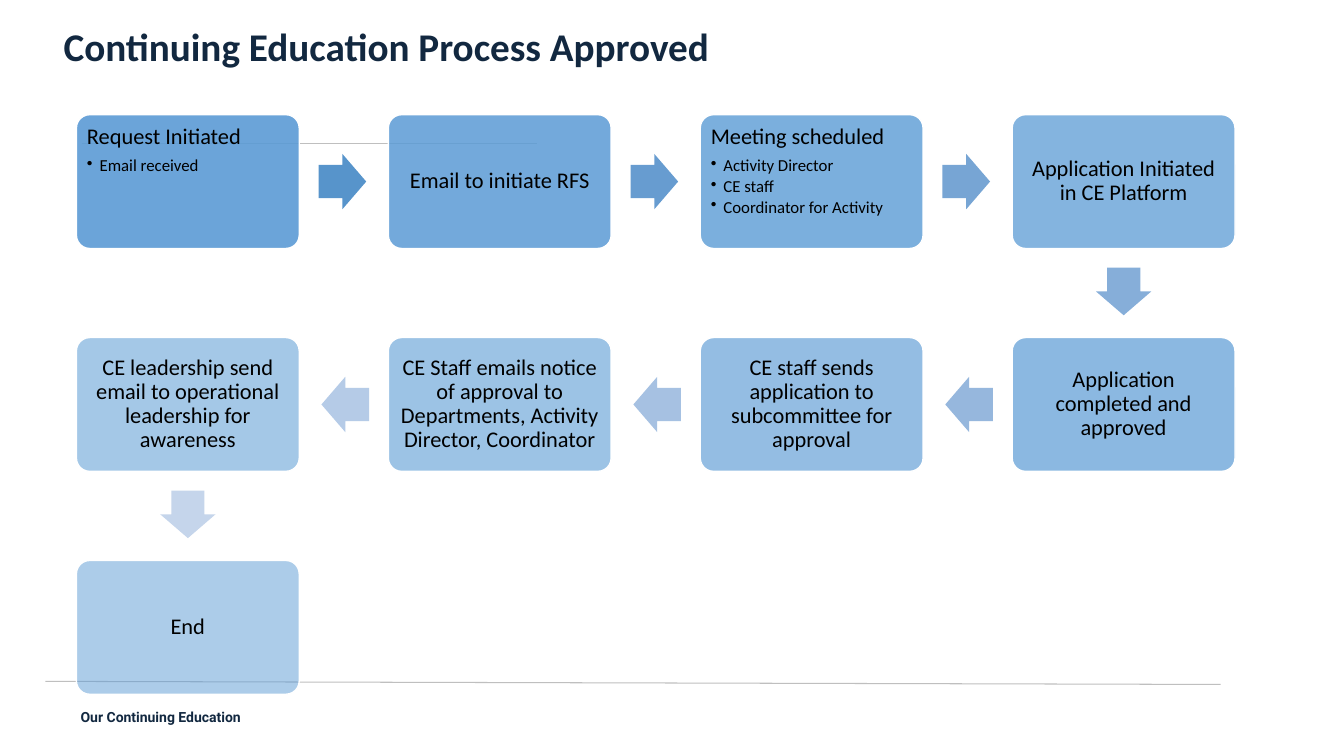
from lxml import etree
from pptx import Presentation
from pptx.dml.color import RGBColor
from pptx.enum.shapes import MSO_CONNECTOR, MSO_SHAPE
from pptx.enum.text import MSO_ANCHOR, MSO_AUTO_SIZE, PP_ALIGN
from pptx.oxml.ns import qn
from pptx.util import Pt

STRAIGHT = MSO_CONNECTOR.STRAIGHT
ROUNDED = MSO_SHAPE.ROUNDED_RECTANGLE
ARROW = MSO_SHAPE.RIGHT_ARROW
TOP, MIDDLE = MSO_ANCHOR.TOP, MSO_ANCHOR.MIDDLE
LEFT, CENTER = PP_ALIGN.LEFT, PP_ALIGN.CENTER
NO_AUTOFIT = MSO_AUTO_SIZE.NONE

NAVY = RGBColor(0x12, 0x28, 0x40)
BLUE = RGBColor(0x5B, 0x9B, 0xD5)
GRAY = RGBColor(0xBF, 0xBF, 0xBF)
BLACK = RGBColor(0x00, 0x00, 0x00)
WHITE = RGBColor(0xFF, 0xFF, 0xFF)
ARROW_COLORS = [
    RGBColor(0x57, 0x94, 0xCB), RGBColor(0x67, 0x9C, 0xD0),
    RGBColor(0x77, 0xA5, 0xD4), RGBColor(0x86, 0xAE, 0xD9),
    RGBColor(0x96, 0xB7, 0xDD), RGBColor(0xA6, 0xC1, 0xE2),
    RGBColor(0xB5, 0xCB, 0xE7), RGBColor(0xC5, 0xD5, 0xEB),
]

STEPS = [
    ("Request Initiated", ["Email received"]),
    ("Email to initiate RFS", []),
    ("Meeting scheduled", ["Activity Director", "CE staff", "Coordinator for Activity"]),
    ("Application Initiated in CE Platform", []),
    ("Application completed and approved", []),
    ("CE staff sends application to subcommittee for approval", []),
    ("CE Staff emails notice of approval to Departments, Activity Director, Coordinator", []),
    ("CE leadership send email to operational leadership for awareness", []),
    ("End", []),
]

COLUMNS = 4
GRID_LEFT, GRID_TOP = 54.6, 81.9
COLUMN_PITCH, ROW_PITCH = 222.8, 159.2
BOX_WIDTH, BOX_HEIGHT = 159.2, 95.6
ARROW_WIDTH, ARROW_HEIGHT = 34, 39.5
ARROW_REACH_ACROSS, ARROW_REACH_DOWN = 110.4, 78.5


def write(para, text, size, font="Calibri", color=BLACK, bold=False,
          align=LEFT, bullet=False, after=0):
    properties = para._p.get_or_add_pPr()
    properties.set("marL", str(Pt(9 if bullet else 0)))
    properties.set("indent", str(Pt(-9 if bullet else 0)))
    para.alignment = align
    para.line_spacing = 0.9
    para.space_before = Pt(0)
    para.space_after = Pt(after)
    if bullet:
        etree.SubElement(properties, qn("a:buChar")).set("char", "•")
    else:
        etree.SubElement(properties, qn("a:buNone"))
    para.font.size = Pt(size)
    para.font.name = font
    span = para.add_run()
    span.text = text
    span.font.name = font
    span.font.size = Pt(size)
    span.font.bold = bold
    span.font.color.rgb = color


deck = Presentation()
deck.slide_width = Pt(960)
deck.slide_height = Pt(540)
page = deck.slides.add_slide(deck.slide_layouts[1])

title, footer = page.placeholders
for holder, text, size, font, place in [
    (title, "Continuing Education Process Approved", 28, "Calibri", (38.2, 15.8, 684.7, 39.6)),
    (footer, "Our Continuing Education", 10, "Roboto", (50.4, 504, 357.8, 20.9)),
]:
    holder.left, holder.top, holder.width, holder.height = map(Pt, place)
    frame = holder.text_frame
    frame.auto_size = NO_AUTOFIT
    frame.word_wrap = True
    frame.vertical_anchor = TOP
    write(frame.paragraphs[0], text, size, font=font, color=NAVY, bold=True)

for ends, weight in [((32.4, 486.7, 871.9, 488.9), 0.75), ((58.3, 102.5, 383.8, 102.5), 0.5)]:
    rule = page.shapes.add_connector(STRAIGHT, *map(Pt, ends))
    rule.line.color.rgb = GRAY
    rule.line.width = Pt(weight)
    etree.SubElement(rule._element.spPr, qn("a:effectLst"))

for number, (heading, details) in enumerate(STEPS):
    row, column = divmod(number, COLUMNS)
    leftward = row % 2 == 1
    last_in_row = column == COLUMNS - 1
    if leftward:
        column = COLUMNS - 1 - column
    left = GRID_LEFT + column * COLUMN_PITCH
    top = GRID_TOP + row * ROW_PITCH

    box = page.shapes.add_shape(ROUNDED, Pt(left), Pt(top), Pt(BOX_WIDTH), Pt(BOX_HEIGHT))
    box.adjustments[0] = 0.1
    box.shadow.inherit = False
    box.fill.solid()
    box.fill.fore_color.rgb = BLUE
    color_node = box._element.spPr.find(qn("a:solidFill"))[0]
    etree.SubElement(color_node, qn("a:alpha")).set("val", str((90 - 5 * number) * 1000))
    box.line.color.rgb = WHITE
    box.line.width = Pt(1)

    frame = box.text_frame
    frame.word_wrap = True
    frame.vertical_anchor = TOP if details else MIDDLE
    frame.margin_left = frame.margin_right = Pt(4.8)
    frame.margin_top = frame.margin_bottom = Pt(4.8)
    write(frame.paragraphs[0], heading, 16,
          align=LEFT if details else CENTER, after=5.6 if details else 0)
    for detail in details:
        write(frame.add_paragraph(), detail, 12, bullet=True, after=1.8)

    if number < len(ARROW_COLORS):
        center_x = left + BOX_WIDTH / 2
        center_y = top + BOX_HEIGHT / 2
        if last_in_row:
            center_y += ARROW_REACH_DOWN
            turn = 90
        elif leftward:
            center_x -= ARROW_REACH_ACROSS
            turn = 180
        else:
            center_x += ARROW_REACH_ACROSS
            turn = 0
        arrow = page.shapes.add_shape(
            ARROW, Pt(center_x - ARROW_WIDTH / 2), Pt(center_y - ARROW_HEIGHT / 2),
            Pt(ARROW_WIDTH), Pt(ARROW_HEIGHT))
        arrow.adjustments[0] = 0.6
        arrow.adjustments[1] = 0.5
        arrow.rotation = turn
        arrow.shadow.inherit = False
        arrow.fill.solid()
        arrow.fill.fore_color.rgb = ARROW_COLORS[number]
        arrow.line.fill.background()

deck.save("out.pptx")
